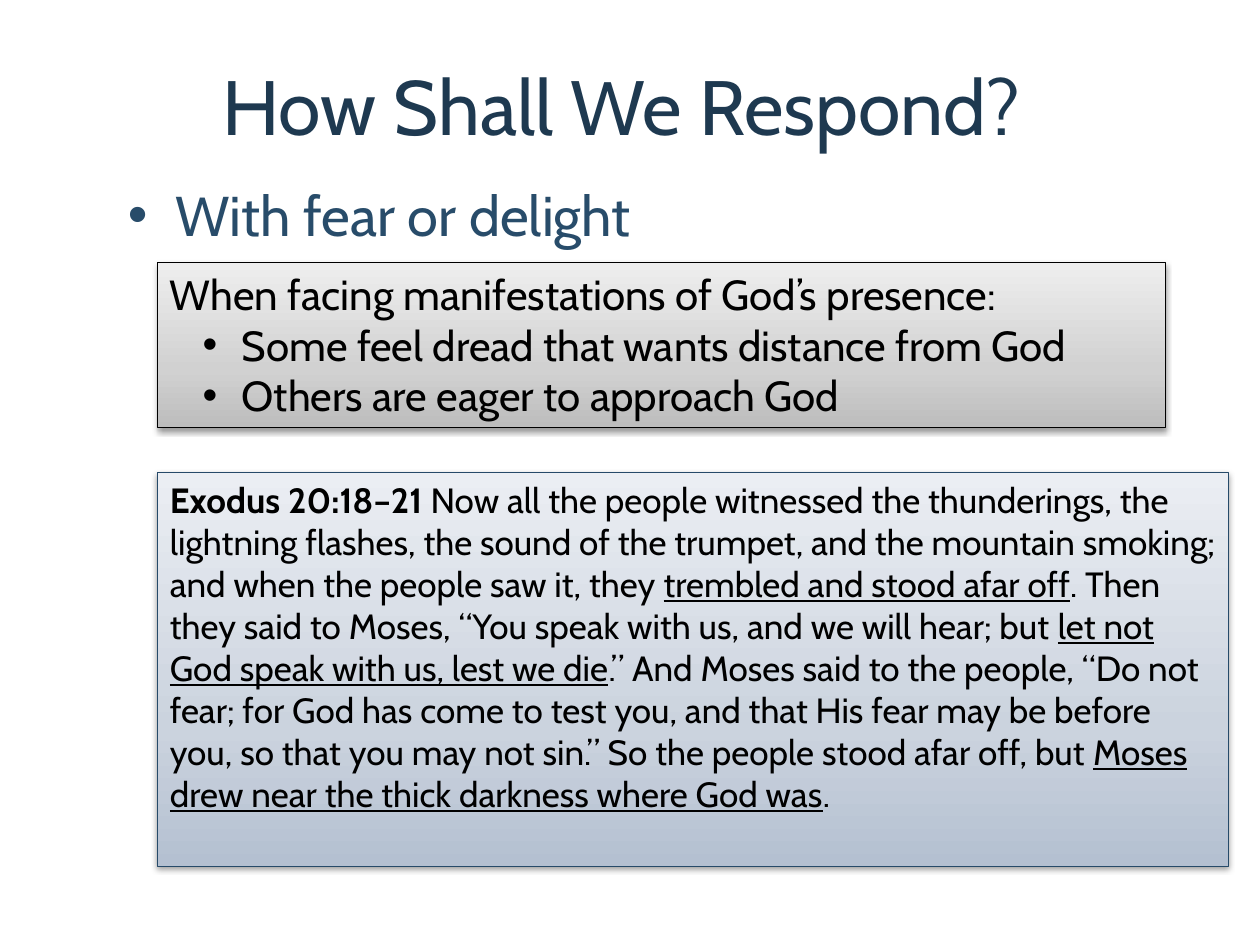
from lxml.etree import SubElement
from pptx import Presentation
from pptx.dml.color import RGBColor
from pptx.enum.shapes import MSO_SHAPE
from pptx.enum.text import MSO_ANCHOR, PP_ALIGN
from pptx.oxml.ns import qn
from pptx.util import Inches, Pt

COLORS = {
    "title": "1E3950",
    "heading": "284C6A",
    "text": "000000",
    "summary_line": "000000",
    "verse_line": "264A69",
    "shadow": "000000",
}
GRADIENTS = {
    "summary": {0: "BDBDBD", 35: "D1D1D1", 100: "EEEEEE"},
    "verse": {0: "B4C0D1", 35: "CBD3DE", 100: "EBEEF3"},
}
FONT = "Cabin"
WIDTH, HEIGHT = Inches(10), Inches(7.5)
COLUMN, ROW = WIDTH / 120, HEIGHT / 90


def place(left, top, width, height):
    return [round(length) for length in
            (left * COLUMN, top * ROW, width * COLUMN, height * ROW)]


def add_bullet(paragraph, margin, hanging, color):
    properties = paragraph._p.get_or_add_pPr()
    properties.set("marL", str(Inches(margin)))
    properties.set("indent", str(-Inches(hanging)))
    bullet_color = SubElement(properties, qn("a:buClr"))
    SubElement(bullet_color, qn("a:srgbClr"), val=color)
    SubElement(properties, qn("a:buFont"), typeface="Arial")
    SubElement(properties, qn("a:buChar"), char="•")


def write_text(frame, runs, size, color=COLORS["text"], first=True,
               bullet=None, spacing=None):
    paragraph = frame.paragraphs[0] if first else frame.add_paragraph()
    paragraph.alignment = PP_ALIGN.LEFT
    if spacing:
        paragraph.line_spacing = spacing
    if bullet:
        add_bullet(paragraph, *bullet, color)
    for text, style in runs:
        run = paragraph.add_run()
        run.text = text
        run.font.name = FONT
        run.font.size = Pt(size)
        run.font.color.rgb = RGBColor.from_string(color)
        run.font.bold = style == "bold"
        run.font.underline = style == "underline"


def add_text_area(slide, box, anchor=MSO_ANCHOR.TOP):
    frame = slide.shapes.add_textbox(*place(*box)).text_frame
    frame.word_wrap = True
    frame.vertical_anchor = anchor
    return frame


def add_panel(slide, box, stops, line_color):
    shape = slide.shapes.add_shape(MSO_SHAPE.RECTANGLE, *place(*box))
    shape.fill.gradient()
    shape.fill.gradient_angle = 90
    stop_list = shape._element.spPr.find(".//" + qn("a:gsLst"))
    for stop in list(stop_list):
        stop_list.remove(stop)
    for position, color in stops.items():
        stop = SubElement(stop_list, qn("a:gs"), pos=str(position * 1000))
        SubElement(stop, qn("a:srgbClr"), val=color)
    shape.line.color.rgb = RGBColor.from_string(line_color)
    shape.line.width = Pt(0.75)
    shape.shadow.inherit = False
    effects = shape._element.spPr.find(qn("a:effectLst"))
    shadow = SubElement(effects, qn("a:outerShdw"), blurRad=str(Pt(3.1)),
                        dist=str(Pt(1.6)), dir="5400000", rotWithShape="0")
    shadow_color = SubElement(shadow, qn("a:srgbClr"), val=COLORS["shadow"])
    SubElement(shadow_color, qn("a:alpha"), val="38000")
    frame = shape.text_frame
    frame.word_wrap = True
    frame.vertical_anchor = MSO_ANCHOR.TOP
    return frame


def add_title(slide, box):
    frame = add_text_area(slide, box, MSO_ANCHOR.MIDDLE)
    write_text(frame, [("How Shall We Respond?", None)], 44, COLORS["title"])


def add_heading(slide, box):
    frame = add_text_area(slide, box)
    write_text(frame, [("With fear or delight", None)], 32, COLORS["heading"],
               bullet=(0.38, 0.38), spacing=1.25)


def add_summary(slide, box):
    frame = add_panel(slide, box, GRADIENTS["summary"], COLORS["summary_line"])
    write_text(frame, [("When facing manifestations of God’s presence:", None)], 24)
    for point in ("Some feel dread that wants distance from God",
                  "Others are eager to approach God"):
        write_text(frame, [(point, None)], 24, first=False, bullet=(0.57, 0.31))


def add_verse(slide, box):
    frame = add_panel(slide, box, GRADIENTS["verse"], COLORS["verse_line"])
    write_text(frame, [
        ("Exodus 20:18–21", "bold"),
        (" Now all the people witnessed the thunderings, the lightning flashes, "
         "the sound of the trumpet, and the mountain smoking; and when the "
         "people saw it, they ", None),
        ("trembled and stood afar off", "underline"),
        (". Then they said to Moses, “You speak with us, and we will hear; but ",
         None),
        ("let not God speak with us, lest we die", "underline"),
        (".” And Moses said to the people, “Do not fear; for God has come to "
         "test you, and that His fear may be before you, so that you may not "
         "sin.” So the people stood afar off, but ", None),
        ("Moses drew near the thick darkness where God was", "underline"),
        (".", None),
    ], 20)


def main():
    presentation = Presentation()
    presentation.slide_width, presentation.slide_height = WIDTH, HEIGHT
    slide = presentation.slides.add_slide(presentation.slide_layouts[6])
    add_title(slide, (20, 4, 97, 12))
    add_heading(slide, (11, 15, 103, 59))
    add_summary(slide, (15, 25, 96, 15.7))
    add_verse(slide, (15, 45, 102, 37.5))
    presentation.save("out.pptx")


if __name__ == "__main__":
    main()
